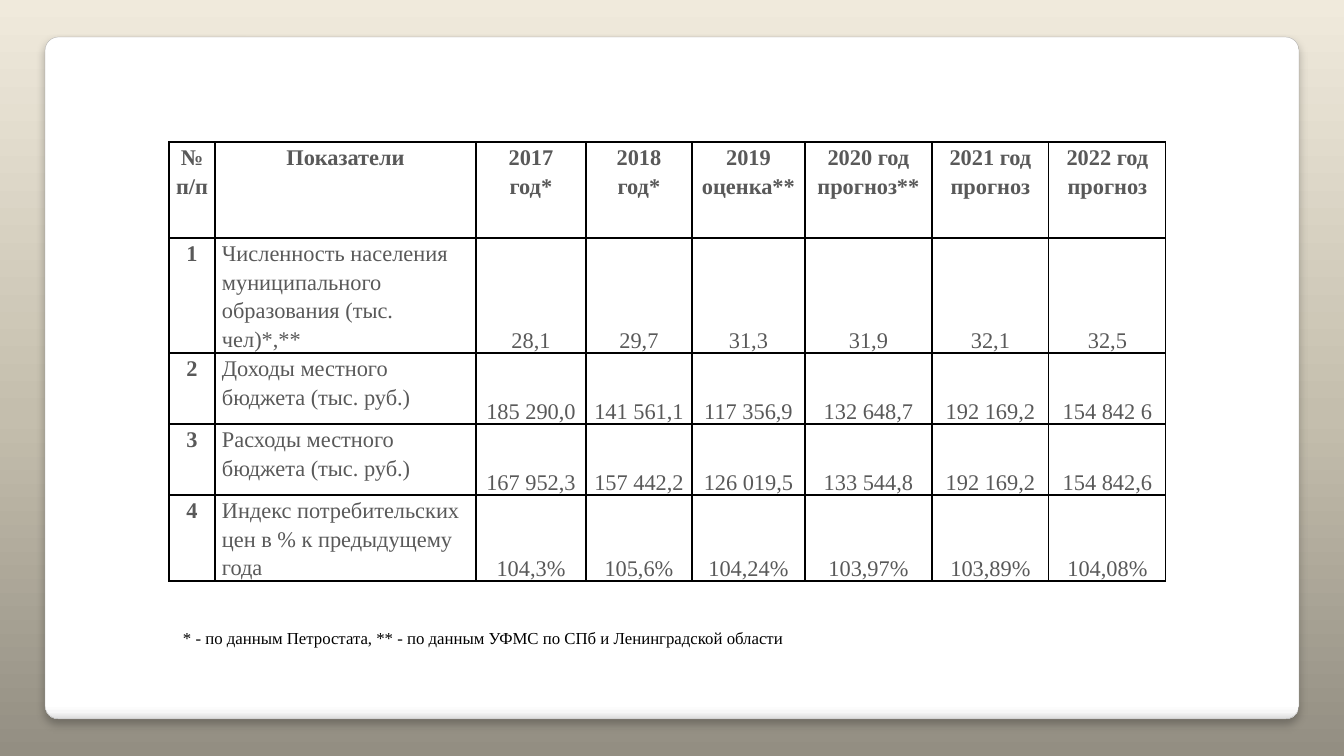
from pptx import Presentation, util as u
from pptx.dml.color import RGBColor
from pptx.enum import shapes, text
from pptx.oxml import parse_xml
from pptx.oxml.ns import nsdecls, qn

PX = 914400 / 100.8
FONT = "Times New Roman"
WIDTHS = [46, 261, 110, 106, 113, 127, 117, 117]
HEIGHTS = [96, 115, 71, 71, 86]
ROWS = [
    ["№ п/п", "Показатели", "2017\nгод*", "2018\nгод*", "2019\nоценка**",
     "2020 год\nпрогноз**", "2021 год\nпрогноз", "2022 год\nпрогноз"],
    ["1", "Численность населения муниципального образования (тыс. чел)*,**",
     "28,1", "29,7", "31,3", "31,9", "32,1", "32,5"],
    ["2", "Доходы местного бюджета (тыс. руб.)",
     "185 290,0", "141 561,1", "117 356,9", "132 648,7", "192 169,2", "154 842 6"],
    ["3", "Расходы местного бюджета (тыс. руб.)",
     "167 952,3", "157 442,2", "126 019,5", "133 544,8", "192 169,2", "154 842,6"],
    ["4", "Индекс потребительских цен в % к предыдущему года",
     "104,3%", "105,6%", "104,24%", "103,97%", "103,89%", "104,08%"],
]


def px(*vals):
    return [u.Emu(round(v * PX)) for v in vals]


def color(code):
    return RGBColor.from_string(code)


def blend(fill, parent, stops, angle):
    """Give the parent element a linear gradient in place of a plain fill."""
    fill.solid()
    marks = "".join(f'<a:gs pos="{pos * 1000}"><a:srgbClr val="{code}"/></a:gs>'
                    for pos, code in stops)
    grad = parse_xml(f'<a:gradFill {nsdecls("a")} rotWithShape="1"><a:gsLst>{marks}</a:gsLst>'
                     f'<a:lin ang="{angle * 60000}" scaled="0"/></a:gradFill>')
    parent.replace(parent.find(qn("a:solidFill")), grad)


def style(para, size, code, bold=False):
    font = para.font
    font.name, font.size, font.bold = FONT, u.Pt(size), bold
    font.color.rgb = color(code)


def backdrop(slide):
    fill = slide.background.fill
    fill.solid()
    blend(fill, slide.element.find(".//" + qn("p:bgPr")),
          [(0, "938E82"), (45, "C4BEAD"), (100, "F0EADC")], 270)


def card(slide, x, y, w, h):
    panel = slide.shapes.add_shape(shapes.MSO_SHAPE.ROUNDED_RECTANGLE, *px(x, y, w, h))
    panel.adjustments[0] = 0.02
    blend(panel.fill, panel.element.spPr,
          [(0, "FFFFFF"), (98, "FFFFFF"), (99, "F7F7F7"), (100, "DADADA")], 90)
    panel.line.color.rgb = color("A4A4A4")
    panel.line.width = u.Pt(0.16)
    panel.shadow.inherit = False
    panel.element.spPr.find(qn("a:effectLst")).append(parse_xml(
        f'<a:outerShdw {nsdecls("a")} blurRad="{u.Pt(6)}" dist="{u.Pt(4)}" dir="5400000" '
        'algn="t" rotWithShape="0"><a:srgbClr val="000000"><a:alpha val="25000"/>'
        '</a:srgbClr></a:outerShdw>'))


def frame(cell):
    """Draw a thin black border on all four sides of a cell."""
    cell.fill.background()
    props = cell._tc.get_or_add_tcPr()
    for i, side in enumerate("LRTB"):
        props.insert(i, parse_xml(
            f'<a:ln{side} {nsdecls("a")} w="{u.Pt(1)}"><a:solidFill>'
            f'<a:srgbClr val="000000"/></a:solidFill></a:ln{side}>'))


def figures(slide, x, y):
    """Place the table of indicators by year."""
    table = slide.shapes.add_table(len(ROWS), len(WIDTHS),
                                   *px(x, y, sum(WIDTHS), sum(HEIGHTS))).table
    table.first_row = table.horz_banding = False
    for col, width in zip(table.columns, px(*WIDTHS)):
        col.width = width
    for row, height in zip(table.rows, px(*HEIGHTS)):
        row.height = height
    for r, row in enumerate(ROWS):
        for c, words in enumerate(row):
            cell = table.cell(r, c)
            frame(cell)
            cell.margin_left, cell.margin_right = px(7, 7)
            cell.margin_top = cell.margin_bottom = 0
            low = r > 0 and c > 1
            cell.vertical_anchor = text.MSO_ANCHOR.BOTTOM if low else text.MSO_ANCHOR.TOP
            cell.text = words
            for para in cell.text_frame.paragraphs:
                style(para, 16, "595959", r == 0 or c == 0)
                para.line_spacing = 1.15
                label = r > 0 and c == 1
                para.alignment = text.PP_ALIGN.LEFT if label else text.PP_ALIGN.CENTER


def footnote(slide, x, y, w, h):
    body = slide.shapes.add_textbox(*px(x, y, w, h)).text_frame
    body.word_wrap = True
    body.vertical_anchor = text.MSO_ANCHOR.MIDDLE
    para = body.paragraphs[0]
    para.text = "* - по данным Петростата, ** - по данным УФМС по СПб и Ленинградской области"
    style(para, 12, "000000")
    props = para._p.get_or_add_pPr()
    props.set("marL", "0")
    props.set("indent", str(px(49)[0]))


def main():
    deck = Presentation()
    deck.slide_width, deck.slide_height = px(1344, 756)
    slide = deck.slides.add_slide(deck.slide_layouts[6])
    backdrop(slide)
    card(slide, 45, 37, 1254, 682)
    figures(slide, 169, 142)
    footnote(slide, 124, 623, 890, 30)
    deck.save("out.pptx")


if __name__ == "__main__":
    main()
